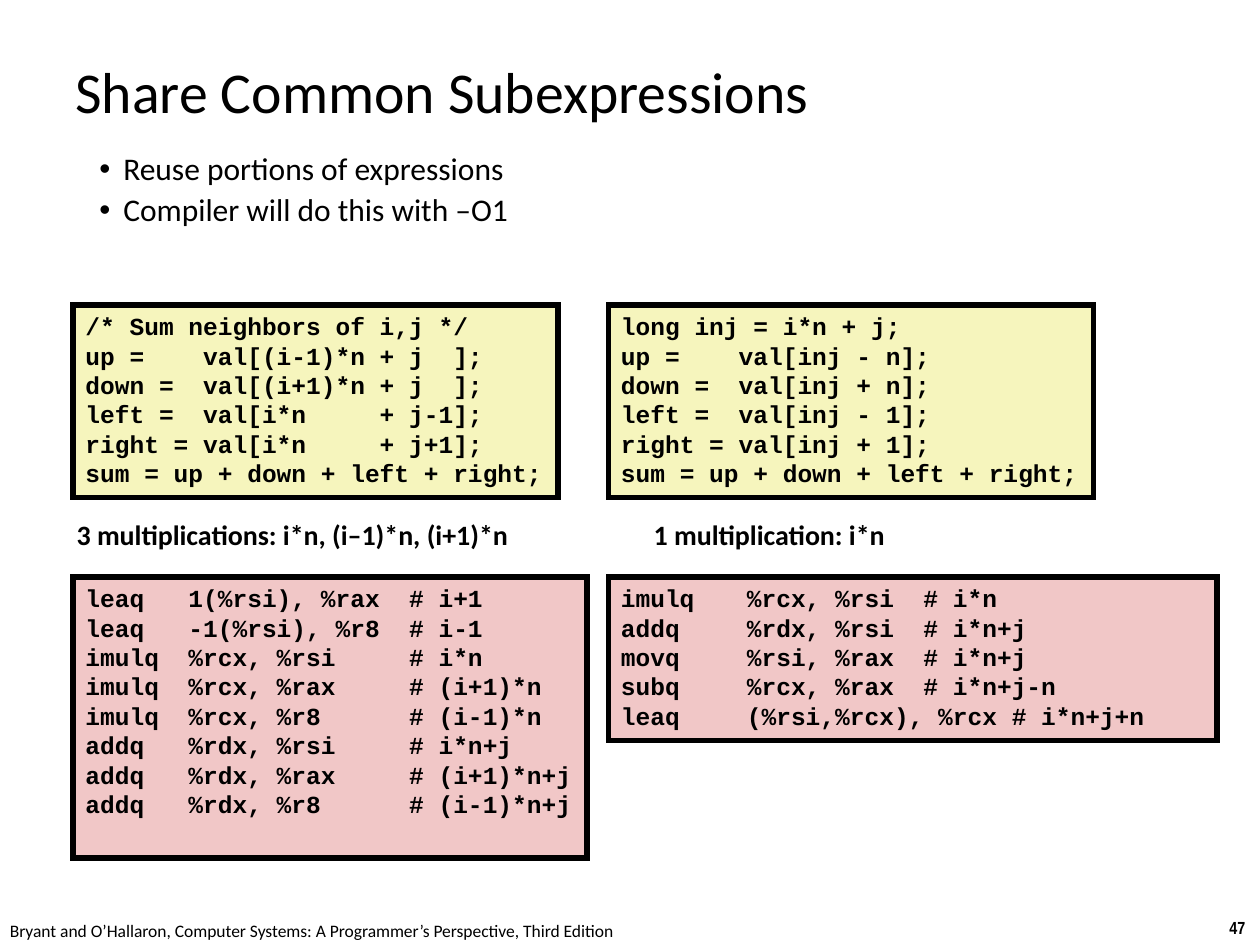
from lxml import etree
from pptx import Presentation
from pptx.dml.color import RGBColor
from pptx.enum.shapes import MSO_SHAPE
from pptx.enum.text import MSO_ANCHOR, PP_ALIGN
from pptx.oxml.ns import qn
from pptx.util import Inches, Pt

RECT = MSO_SHAPE.RECTANGLE
TOP, MIDDLE = MSO_ANCHOR.TOP, MSO_ANCHOR.MIDDLE
LEFT = PP_ALIGN.LEFT

BLACK = RGBColor(0x00, 0x00, 0x00)
C_YELLOW = RGBColor(0xF6, 0xF5, 0xBD)
ASM_PINK = RGBColor(0xF1, 0xC7, 0xC7)

SANS, NARROW, MONO = "Calibri", "Arial Narrow", "Courier New"

COLS = (0.58, 4.83)
C_ROW, CAPTION_ROW, ASM_ROW = 2.42, 4.06, 4.58
C_SIZE = (3.85, 1.53)

C_BEFORE = """/* Sum neighbors of i,j */
up =    val[(i-1)*n + j  ];
down =  val[(i+1)*n + j  ];
left =  val[i*n     + j-1];
right = val[i*n     + j+1];
sum = up + down + left + right;"""

C_AFTER = """long inj = i*n + j;
up =    val[inj - n];
down =  val[inj + n];
left =  val[inj - 1];
right = val[inj + 1];
sum = up + down + left + right;"""

ASM_BEFORE = """leaq   1(%rsi), %rax  # i+1
leaq   -1(%rsi), %r8  # i-1
imulq  %rcx, %rsi     # i*n
imulq  %rcx, %rax     # (i+1)*n
imulq  %rcx, %r8      # (i-1)*n
addq   %rdx, %rsi     # i*n+j
addq   %rdx, %rax     # (i+1)*n+j
addq   %rdx, %r8      # (i-1)*n+j"""

ASM_AFTER = """imulq\t%rcx, %rsi  # i*n
addq\t%rdx, %rsi  # i*n+j
movq\t%rsi, %rax  # i*n+j
subq\t%rcx, %rax  # i*n+j-n
leaq\t(%rsi,%rcx), %rcx # i*n+j+n"""


def write(sp, text, size, font=SANS, bold=False, anchor=TOP, wrap=False,
          spacing=None, before=None, bullet=None, tab=None):
    """Fill a shape with one paragraph per line of text."""
    tf = sp.text_frame
    tf.word_wrap = wrap
    tf.vertical_anchor = anchor
    for i, line in enumerate(text.split("\n")):
        p = tf.paragraphs[0] if i == 0 else tf.add_paragraph()
        p.alignment = LEFT
        if spacing:
            p.line_spacing = spacing
        if before:
            p.space_before = Pt(before)
        if bullet:
            add_bullet(p, bullet)
        if tab:
            add_tab_stop(p, tab)
        r = p.add_run()
        r.text = line
        r.font.size = Pt(size)
        r.font.name = font
        r.font.bold = bold
        r.font.color.rgb = BLACK


def add_bullet(p, char, margin=0.56, hanging=0.19):
    pPr = p._p.get_or_add_pPr()
    pPr.set("marL", str(Inches(margin)))
    pPr.set("indent", str(-Inches(hanging)))
    etree.SubElement(pPr, qn("a:buFont")).set("typeface", "Arial")
    etree.SubElement(pPr, qn("a:buChar")).set("char", char)


def add_tab_stop(p, position):
    tabs = etree.SubElement(p._p.get_or_add_pPr(), qn("a:tabLst"))
    etree.SubElement(tabs, qn("a:tab"), pos=str(Inches(position)), algn="l")


def add_label(slide, x, y, w, h, text, size, **fmt):
    sp = slide.shapes.add_textbox(Inches(x), Inches(y), Inches(w), Inches(h))
    write(sp, text, size, **fmt)


def add_code(slide, x, y, w, h, code, fill, **fmt):
    """Add a filled box of code with a square-cornered border."""
    sp = slide.shapes.add_shape(RECT, Inches(x), Inches(y), Inches(w), Inches(h))
    sp.shadow.inherit = False
    sp.fill.solid()
    sp.fill.fore_color.rgb = fill
    sp.line.color.rgb = BLACK
    sp.line.width = Pt(3)
    ln = sp.element.spPr.find(qn("a:ln"))
    etree.SubElement(ln, qn("a:miter"), lim="800000")
    write(sp, code, 14, font=MONO, bold=True, **fmt)


def main():
    prs = Presentation()
    prs.slide_width, prs.slide_height = Inches(10), Inches(7.5)
    s = prs.slides.add_slide(prs.slide_layouts[6])

    add_label(s, 0.5, 0.17, 9.17, 1.16, "Share Common Subexpressions", 33,
              anchor=MIDDLE, wrap=True, spacing=0.9)
    add_label(s, 0.32, 1.17, 9.09, 0.8,
              "Reuse portions of expressions\nCompiler will do this with –O1", 18,
              wrap=True, spacing=0.9, before=3.8, bullet="•")

    for x, code in zip(COLS, (C_BEFORE, C_AFTER)):
        add_code(s, x, C_ROW, *C_SIZE, code, C_YELLOW)

    add_label(s, 0.51, CAPTION_ROW, 3.67, 0.37,
              "3 multiplications: i*n, (i–1)*n, (i+1)*n", 16, bold=True)
    add_label(s, 5.09, CAPTION_ROW, 2.06, 0.37,
              "1 multiplication: i*n", 16, bold=True)

    add_code(s, COLS[0], ASM_ROW, 4.08, 2.23, ASM_BEFORE, ASM_PINK, wrap=True)
    add_code(s, COLS[1], ASM_ROW, 4.83, 1.3, ASM_AFTER, ASM_PINK, wrap=True,
             tab=1)

    add_label(s, -0.02, 7.25, 5.08, 0.27,
              "Bryant and O’Hallaron, Computer Systems: "
              "A Programmer’s Perspective, Third Edition", 10)
    add_label(s, 9.66, 7.23, 0.34, 0.27, "47", 10, font=NARROW, bold=True)

    prs.save("out.pptx")


if __name__ == "__main__":
    main()
